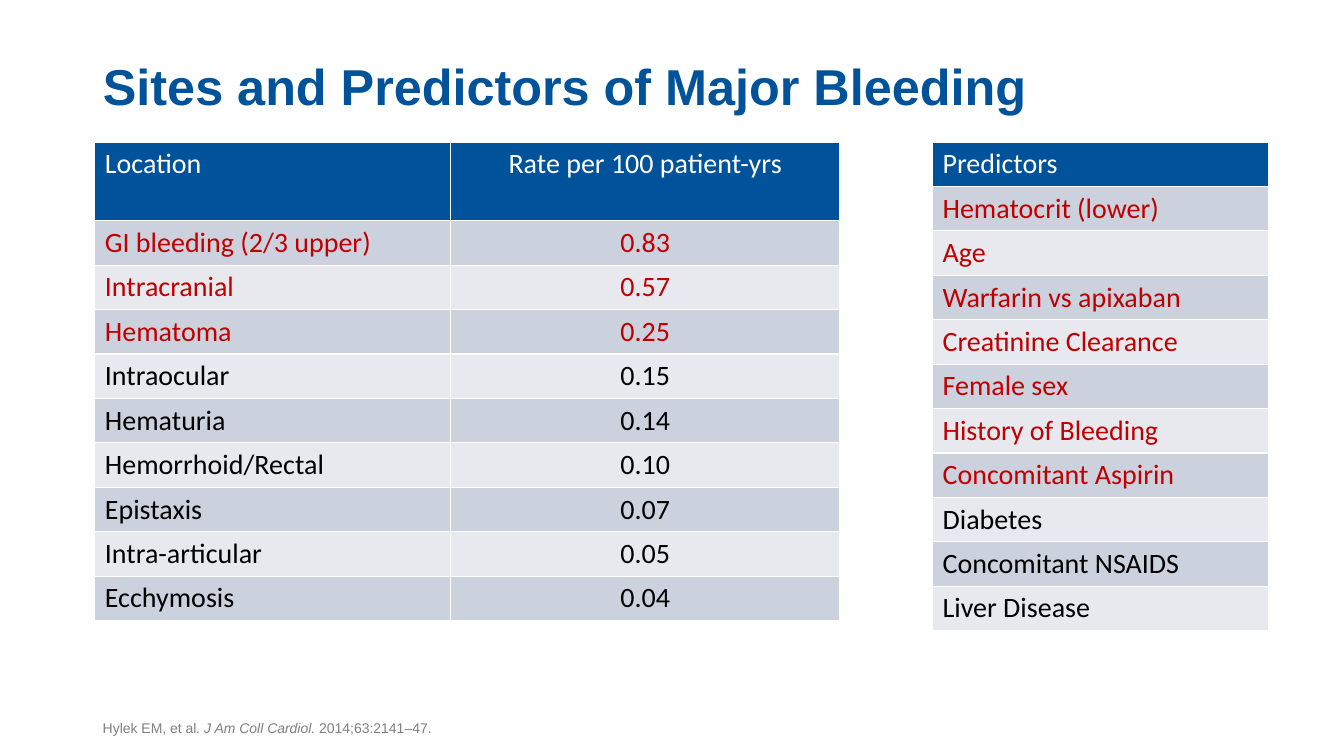
"""Build the slide on sites and predictors of major bleeding."""
from dataclasses import dataclass

from pptx import Presentation
from pptx import util as u
from pptx.dml.color import RGBColor
from pptx.enum import text

COLOURS = {
    "blue": "00539B",
    "white": "FFFFFF",
    "red": "C00000",
    "black": "000000",
    "grey": "808080",
    "dark band": "CCD1DE",
    "light band": "E7E9EF",
}


@dataclass(frozen=True)
class TableData:
    """A table with a header row and some leading rows in red."""

    left: float
    column_widths: list[float]
    header_height: float
    row_height: float
    red_rows: int
    rows: list[tuple[str, ...]]


TABLE_TOP = 3.58
TABLES = [
    TableData(2.39, [8.97, 9.8], 1.98, 1.12, 3, [
        ("Location", "Rate per 100 patient-yrs"),
        ("GI bleeding (2/3 upper)", "0.83"),
        ("Intracranial", "0.57"),
        ("Hematoma", "0.25"),
        ("Intraocular", "0.15"),
        ("Hematuria", "0.14"),
        ("Hemorrhoid/Rectal", "0.10"),
        ("Epistaxis", "0.07"),
        ("Intra-articular", "0.05"),
        ("Ecchymosis", "0.04"),
    ]),
    TableData(23.5, [8.46], 1.07, 1.07, 7, [
        ("Predictors",),
        ("Hematocrit (lower)",),
        ("Age",),
        ("Warfarin vs apixaban",),
        ("Creatinine Clearance",),
        ("Female sex",),
        ("History of Bleeding",),
        ("Concomitant Aspirin",),
        ("Diabetes",),
        ("Concomitant NSAIDS",),
        ("Liver Disease",),
    ]),
]
CITATION = [
    ("Hylek EM, et al", False),
    (". J Am Coll Cardiol. ", True),
    ("2014;63:2141–47.", False),
]


def colour(name: str) -> RGBColor:
    """Return the named colour."""
    return RGBColor.from_string(COLOURS[name])


def format_run(run, font: str, size: int, colour_name: str,
               bold: bool = False, italic: bool = False) -> None:
    """Set the font of a run."""
    run.font.name = font
    run.font.size = u.Pt(size)
    run.font.color.rgb = colour(colour_name)
    run.font.bold = bold
    run.font.italic = italic


def row_colours(row: int, red_rows: int) -> tuple[str, str]:
    """Return the fill and text colour names for a table row."""
    if row == 0:
        return "blue", "white"
    fill = "dark band" if row % 2 else "light band"
    return fill, "red" if row <= red_rows else "black"


def add_title(slide) -> None:
    """Place and format the title."""
    title = slide.shapes.title
    title.left, title.top = u.Cm(2.34), u.Cm(0)
    title.width, title.height = u.Cm(29.21), u.Cm(3.07)
    frame = title.text_frame
    frame.text = "Sites and Predictors of Major Bleeding"
    frame.auto_size = text.MSO_AUTO_SIZE.NONE
    frame.vertical_anchor = text.MSO_ANCHOR.BOTTOM
    paragraph = frame.paragraphs[0]
    paragraph.alignment = text.PP_ALIGN.LEFT
    paragraph.line_spacing = 0.9
    format_run(paragraph.runs[0], "Arial", 36, "blue", bold=True)


def add_data_table(slide, data: TableData) -> None:
    """Draw one banded table."""
    body_height = data.row_height * (len(data.rows) - 1)
    table = slide.shapes.add_table(
        len(data.rows), len(data.column_widths), u.Cm(data.left), u.Cm(TABLE_TOP),
        u.Cm(sum(data.column_widths)), u.Cm(data.header_height + body_height)).table
    for column, width in zip(table.columns, data.column_widths):
        column.width = u.Cm(width)
    for row, values in enumerate(data.rows):
        table.rows[row].height = u.Cm(data.row_height if row else data.header_height)
        fill, font_colour = row_colours(row, data.red_rows)
        for column, value in enumerate(values):
            cell = table.cell(row, column)
            cell.fill.solid()
            cell.fill.fore_color.rgb = colour(fill)
            cell.text_frame.text = value
            paragraph = cell.text_frame.paragraphs[0]
            paragraph.alignment = text.PP_ALIGN.CENTER if column else text.PP_ALIGN.LEFT
            format_run(paragraph.runs[0], "Calibri", 20, font_colour)


def add_citation(slide) -> None:
    """Write the source at the foot of the slide."""
    box = slide.shapes.add_textbox(u.Cm(2.34), u.Cm(17.65), u.Cm(29.21), u.Cm(1.02))
    frame = box.text_frame
    frame.word_wrap = True
    frame.vertical_anchor = text.MSO_ANCHOR.BOTTOM
    for words, italic in CITATION:
        run = frame.paragraphs[0].add_run()
        run.text = words
        format_run(run, "Arial", 10, "grey", italic=italic)


def main() -> None:
    """Build and save the presentation."""
    presentation = Presentation()
    presentation.slide_width, presentation.slide_height = u.Cm(33.87), u.Cm(19.05)
    slide = presentation.slides.add_slide(presentation.slide_layouts[5])
    add_title(slide)
    for data in TABLES:
        add_data_table(slide, data)
    add_citation(slide)
    presentation.save("out.pptx")


if __name__ == "__main__":
    main()
